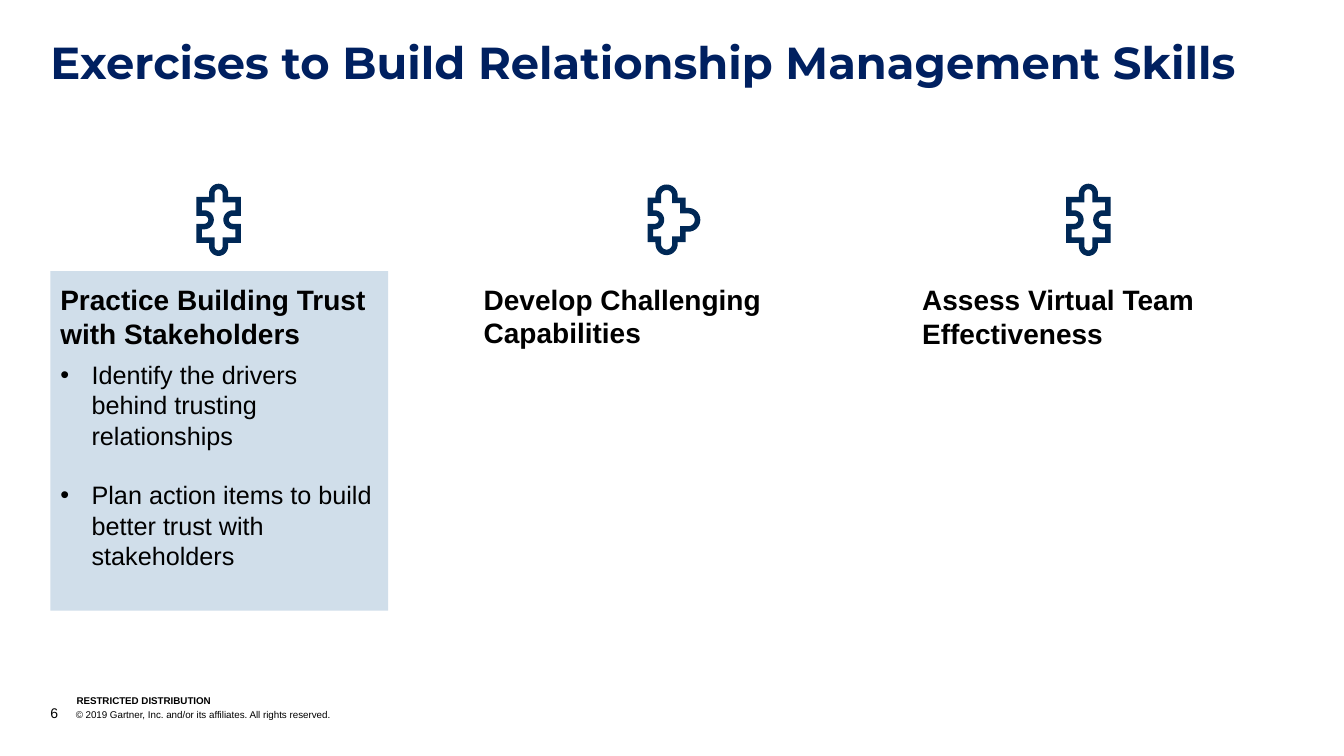
from dataclasses import dataclass
from math import cos, radians, sin

from lxml import etree
from pptx import Presentation
from pptx.dml.color import RGBColor
from pptx.enum.shapes import MSO_SHAPE
from pptx.enum.text import MSO_ANCHOR, MSO_AUTO_SIZE, PP_ALIGN
from pptx.oxml.ns import qn
from pptx.util import Cm, Pt

RECTANGLE = MSO_SHAPE.RECTANGLE
TOP, MIDDLE, BOTTOM = MSO_ANCHOR.TOP, MSO_ANCHOR.MIDDLE, MSO_ANCHOR.BOTTOM
LEFT = PP_ALIGN.LEFT
NO_AUTOFIT = MSO_AUTO_SIZE.NONE


@dataclass(frozen=True)
class Theme:
    title_font: str = "Montserrat"
    body_font: str = "Arial"
    title_color: str = "002060"
    icon_color: str = "002856"
    card_color: str = "D0DEEA"
    white: str = "FFFFFF"
    black: str = "000000"
    title_size: float = 32
    heading_size: float = 20
    bullet_size: float = 18
    number_size: float = 10
    footer_size: float = 7


@dataclass(frozen=True)
class Puzzle:
    """Puzzle piece measured in centimetres from its centre."""
    half_width: float
    half_height: float
    knob_radius: float
    knob_offset: float
    socket_offset: float
    side_knob_radius: float = 0
    side_knob_offset: float = 0


THEME = Theme()
STROKE = 0.14
SOCKET_RADIUS = 0.1
ICON_CENTER_Y = 5.54
NARROW_PIECE = Puzzle(0.56, 0.58, 0.24, 0.67, 0.36)
SIDE_KNOB_PIECE = Puzzle(0.48, 0.56, 0.28, 0.61, 0.3, 0.3, 0.55)
ICONS = [(5.51, NARROW_PIECE), (16.8, SIDE_KNOB_PIECE), (27.43, NARROW_PIECE)]
HEADINGS = [
    ("Develop Challenging Capabilities", 11.89, 6.81, 2.31),
    ("Assess Virtual Team Effectiveness", 22.94, 6.83, 11.2),
]
BULLETS = [
    "Identify the drivers behind trusting relationships",
    "Plan action items to build better trust with stakeholders",
]


# Text
def setup_frame(frame, anchor=TOP, insets=(0, 0, 0, 0)):
    frame.word_wrap = True
    frame.auto_size = NO_AUTOFIT
    frame.vertical_anchor = anchor
    (frame.margin_left, frame.margin_top,
     frame.margin_right, frame.margin_bottom) = [Cm(inset) for inset in insets]
    return frame


def add_run(paragraph, text, size, font, color, bold):
    run = paragraph.add_run()
    run.text = text
    run.font.size = Pt(size)
    run.font.name = font
    run.font.bold = bold
    run.font.color.rgb = RGBColor.from_string(color)


def write(frame, text, *, size, font=THEME.body_font, color=THEME.black, bold=False,
          before=0, after=0, line_spacing=1.0, hanging=0, bullet=None, tab=False):
    first = frame.paragraphs[0]
    paragraph = frame.add_paragraph() if first.runs else first
    paragraph.alignment = LEFT
    paragraph.line_spacing = line_spacing
    paragraph.space_before = Pt(before)
    paragraph.space_after = Pt(after)
    properties = paragraph._p.get_or_add_pPr()
    properties.set("marL", str(Cm(hanging)))
    properties.set("indent", str(-Cm(hanging)))
    if bullet:
        etree.SubElement(properties, qn("a:buFont"), typeface=THEME.body_font)
        etree.SubElement(properties, qn("a:buChar"), char=bullet)
    else:
        etree.SubElement(properties, qn("a:buNone"))
    if tab:
        tabs = etree.SubElement(properties, qn("a:tabLst"))
        etree.SubElement(tabs, qn("a:tab"), pos=str(Cm(hanging)), algn="l")
    add_run(paragraph, text, size, font, color, bold)
    return paragraph


# Shapes
def add_panel(slide, left, top, width, height, fill, **frame_format):
    panel = slide.shapes.add_shape(RECTANGLE, Cm(left), Cm(top), Cm(width), Cm(height))
    panel.shadow.inherit = False
    panel.fill.solid()
    panel.fill.fore_color.rgb = RGBColor.from_string(fill)
    panel.line.fill.background()
    return setup_frame(panel.text_frame, **frame_format)


def add_text_box(slide, left, top, width, height, **frame_format):
    box = slide.shapes.add_textbox(Cm(left), Cm(top), Cm(width), Cm(height))
    return setup_frame(box.text_frame, **frame_format)


def arc(x, y, radius, start, end, steps=16):
    angles = [radians(start + (end - start) * step / steps) for step in range(steps + 1)]
    return [(x + radius * cos(angle), y + radius * sin(angle)) for angle in angles]


def puzzle_contour(piece, inset):
    """Clockwise outline, moved inwards by inset."""
    x, y = piece.half_width - inset, piece.half_height - inset
    knob, socket = piece.knob_radius - inset, SOCKET_RADIUS + inset
    if piece.side_knob_radius:
        side_radius = piece.side_knob_radius - inset
        right = arc(piece.side_knob_offset, 0, side_radius, -90, 90)
    else:
        side_radius = socket
        right = arc(piece.socket_offset, 0, socket, 270, 90)
    return [
        (-x, -y), (-knob, -y), *arc(0, -piece.knob_offset, knob, 180, 360), (knob, -y),
        (x, -y), (x, -side_radius), *right, (x, side_radius),
        (x, y), (knob, y), *arc(0, piece.knob_offset, knob, 0, 180), (-knob, y),
        (-x, y), (-x, socket), *arc(-piece.socket_offset, 0, socket, 90, -90), (-x, -socket),
    ]


def add_puzzle_icon(slide, center_x, piece):
    outer, inner = [
        [(Cm(center_x + x), Cm(ICON_CENTER_Y + y)) for x, y in puzzle_contour(piece, inset)]
        for inset in (0, STROKE)
    ]
    builder = slide.shapes.build_freeform(*outer[0])
    builder.add_line_segments(outer[1:], close=True)
    builder.move_to(*inner[0])
    builder.add_line_segments(inner[1:], close=True)
    icon = builder.convert_to_shape()
    icon.shadow.inherit = False
    icon.fill.solid()
    icon.fill.fore_color.rgb = RGBColor.from_string(THEME.icon_color)
    icon.line.fill.background()


# Slide parts
def add_title(slide, text):
    title = slide.shapes.title
    title.left, title.top, title.width, title.height = Cm(1.27), Cm(1.02), Cm(31.32), Cm(1.22)
    write(setup_frame(title.text_frame), text, size=THEME.title_size, font=THEME.title_font,
          color=THEME.title_color, bold=True, after=12, line_spacing=0.9)


def add_trust_card(slide):
    frame = add_panel(slide, 1.27, 6.83, 8.51, 8.56, THEME.card_color,
                      anchor=MIDDLE, insets=(0.25, 0.13, 0.25, 0.86))
    write(frame, "Practice Building Trust with Stakeholders", size=THEME.heading_size, bold=True)
    for bullet, gap in zip(BULLETS, (7, 21)):
        write(frame, bullet, size=THEME.bullet_size, before=gap, hanging=0.79, bullet="•")


def add_footer(slide):
    frame = add_text_box(slide, 1.27, 17.75, 20.29, 0.43, anchor=BOTTOM)
    paragraph = write(frame, "6", size=THEME.number_size, hanging=0.64, tab=True)
    add_run(paragraph, "\t© 2019 Gartner, Inc. and/or its affiliates. All rights reserved.",
            THEME.footer_size, THEME.body_font, THEME.black, False)
    frame = add_text_box(slide, 1.93, 17.5, 6.43, 0.3, anchor=BOTTOM)
    write(frame, "RESTRICTED DISTRIBUTION", size=THEME.footer_size, bold=True)


def main():
    presentation = Presentation()
    presentation.slide_width, presentation.slide_height = Cm(33.87), Cm(19.05)
    slide = presentation.slides.add_slide(presentation.slide_layouts[5])
    add_footer(slide)
    add_title(slide, "Exercises to Build Relationship Management Skills")
    for text, left, top, height in HEADINGS:
        frame = add_panel(slide, left, top, 10.08, height, THEME.white, insets=(0.3,) * 4)
        write(frame, text, size=THEME.heading_size, bold=True, after=12)
    for center_x, piece in ICONS:
        add_puzzle_icon(slide, center_x, piece)
    add_trust_card(slide)
    presentation.save("out.pptx")


if __name__ == "__main__":
    main()
